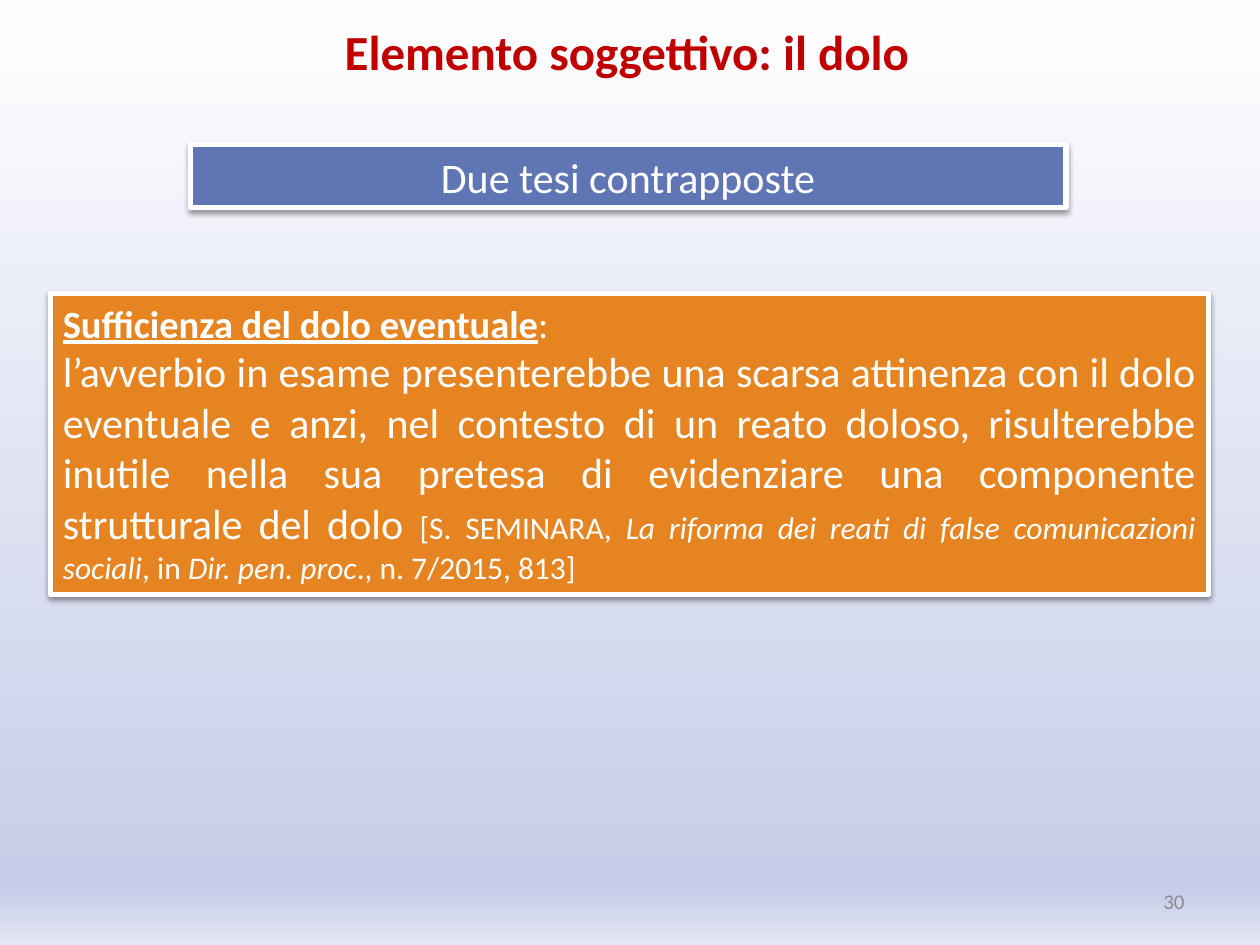
"""Build a slide on the subjective element of the offence: two opposing views."""
import copy

import pptx
import pptx.dml.color
import pptx.enum.shapes
import pptx.enum.text
import pptx.oxml
import pptx.oxml.ns
import pptx.util

Inches = pptx.util.Inches
Align = pptx.enum.text.PP_ALIGN
Anchor = pptx.enum.text.MSO_ANCHOR


def color(value):
    return pptx.dml.color.RGBColor.from_string(value)


class SlideBuilder:
    font_name = "Calibri"
    white = "FFFFFF"
    shadow_xml = (
        f'<a:outerShdw {pptx.oxml.ns.nsdecls("a")} blurRad="39370" dist="20320" '
        'dir="5400000" rotWithShape="0"><a:srgbClr val="000000">'
        '<a:alpha val="38000"/></a:srgbClr></a:outerShdw>'
    )

    def __init__(self, presentation):
        self.slide = presentation.slides.add_slide(presentation.slide_layouts[5])

    def background(self, stops):
        fill = self.slide.background.fill
        fill.gradient()
        fill.gradient_angle = 270
        stop_list = self.slide.element.find(".//" + pptx.oxml.ns.qn("a:gsLst"))
        while len(stop_list) < len(stops):
            stop_list.append(copy.deepcopy(stop_list[-1]))
        for stop, (position, value) in zip(fill.gradient_stops, stops):
            stop.position = position
            stop.color.rgb = color(value)

    def add_text(self, shape, paragraphs, alignment, value, anchor=Anchor.TOP):
        frame = shape.text_frame
        frame.word_wrap = True
        frame.auto_size = pptx.enum.text.MSO_AUTO_SIZE.NONE
        frame.vertical_anchor = anchor
        for index, runs in enumerate(paragraphs):
            paragraph = frame.add_paragraph() if index else frame.paragraphs[0]
            paragraph.alignment = alignment
            for text, size, style in runs:
                run = paragraph.add_run()
                run.text = text
                run.font.name = self.font_name
                run.font.size = pptx.util.Pt(size)
                run.font.color.rgb = color(value)
                run.font.bold = "b" in style
                run.font.italic = "i" in style
                run.font.underline = "u" in style

    def title(self, text, left, top, width, height):
        shape = self.slide.shapes.title
        shape.left, shape.top = Inches(left), Inches(top)
        shape.width, shape.height = Inches(width), Inches(height)
        self.add_text(shape, [[(text, 28, "b")]], Align.CENTER, "C00000")

    def box(self, paragraphs, left, top, width, height, fill, alignment):
        shape = self.slide.shapes.add_shape(
            pptx.enum.shapes.MSO_SHAPE.RECTANGLE,
            Inches(left), Inches(top), Inches(width), Inches(height))
        shape.fill.solid()
        shape.fill.fore_color.rgb = color(fill)
        shape.line.color.rgb = color(self.white)
        shape.line.width = pptx.util.Pt(3)
        shape.shadow.inherit = False
        effects = shape.element.spPr.find(pptx.oxml.ns.qn("a:effectLst"))
        effects.append(pptx.oxml.parse_xml(self.shadow_xml))
        self.add_text(shape, paragraphs, alignment, self.white)

    def page_number(self, text, left, top, width, height):
        shape = self.slide.shapes.add_textbox(
            Inches(left), Inches(top), Inches(width), Inches(height))
        self.add_text(shape, [[(text, 12, "")]], Align.RIGHT, "8C8C8C", Anchor.MIDDLE)


def main():
    presentation = pptx.Presentation()
    presentation.slide_width = Inches(10)
    presentation.slide_height = Inches(7.5)
    builder = SlideBuilder(presentation)
    builder.background([(0.01, "FEFEFF"), (0.94, "C6CDE8"), (1, "E3E6F3")])
    builder.title("Elemento soggettivo: il dolo", 0.25, 0.12, 9.45, 0.57)
    builder.box([[("Due tesi contrapposte", 24, "")]],
                1.51, 1.15, 6.95, 0.5, "6076B4", Align.CENTER)
    thesis = [
        [("Sufficienza del dolo eventuale", 22, "bu"), (":", 22, "")],
        [
            ("l’avverbio in esame presenterebbe una scarsa attinenza con il dolo "
             "eventuale e anzi, nel contesto di un reato doloso, risulterebbe inutile "
             "nella sua pretesa di evidenziare una componente strutturale del dolo ",
             24, ""),
            ("[S. SEMINARA, ", 18, ""),
            ("La riforma dei reati di false comunicazioni sociali", 18, "i"),
            (", in ", 18, ""),
            ("Dir. pen. proc", 18, "i"),
            ("., n. 7/2015, 813]", 18, ""),
        ],
    ]
    builder.box(thesis, 0.4, 2.33, 9.19, 2.39, "E68422", Align.JUSTIFY)
    builder.page_number("30", 7.17, 6.95, 2.33, 0.4)
    presentation.save("out.pptx")


if __name__ == "__main__":
    main()
